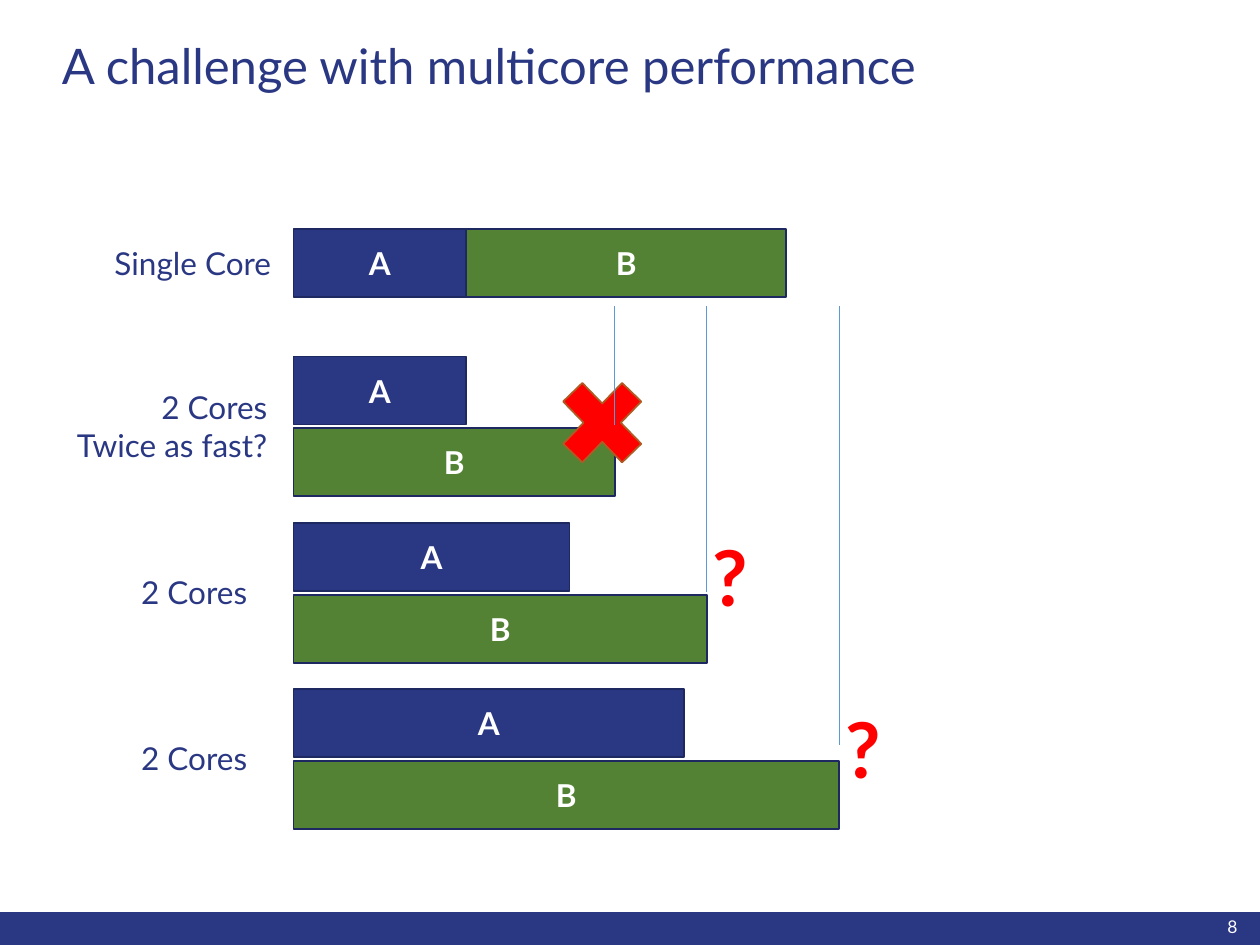
from lxml import etree
from pptx import Presentation
from pptx import util as u
from pptx.dml.color import RGBColor
from pptx.enum import shapes, text
from pptx.oxml.ns import qn

NAVY = RGBColor(0x2A, 0x37, 0x83)
OUTLINE = RGBColor(0x1F, 0x29, 0x61)
GREEN = RGBColor(0x54, 0x82, 0x35)
RED = RGBColor(0xFF, 0x00, 0x00)
BROWN = RGBColor(0xAF, 0x5C, 0x24)
BLUE = RGBColor(0x5B, 0x9B, 0xD5)
WHITE = RGBColor(0xFF, 0xFF, 0xFF)

FONT = "Lato"
PX = 9144  # 100 px to the inch
BAR_LEFT, BAR_HEIGHT, BAR_STEP = 233, 54, 57
GUIDE_TOP = 243
LEFT, CENTER, RIGHT = (text.PP_ALIGN.LEFT, text.PP_ALIGN.CENTER,
                       text.PP_ALIGN.RIGHT)


def emu(*lengths):
    return [u.Emu(length * PX) for length in lengths]


def write(frame, lines, size, color, align, bold=False,
          anchor=text.MSO_ANCHOR.TOP):
    frame.word_wrap = True
    frame.vertical_anchor = anchor
    for index, line in enumerate(lines):
        para = frame.add_paragraph() if index else frame.paragraphs[0]
        para.alignment = align
        span = para.add_run()
        span.text = line
        span.font.name = FONT
        span.font.size = u.Pt(size)
        span.font.bold = bold
        span.font.color.rgb = color


def add_label(page, box, lines, size=18, color=NAVY, align=RIGHT, **style):
    label = page.shapes.add_textbox(*emu(*box))
    write(label.text_frame, lines, size, color, align, **style)


def add_block(page, kind, box, fill, line=None):
    block = page.shapes.add_shape(kind, *emu(*box))
    block.shadow.inherit = False
    block.fill.solid()
    block.fill.fore_color.rgb = fill
    if line is None:
        block.line.fill.background()
    else:
        block.line.color.rgb = line
        block.line.width = u.Pt(1)
    return block


def add_bar(page, left, top, width, name, fill):
    bar = add_block(page, shapes.MSO_SHAPE.RECTANGLE,
                    (left, top, width, BAR_HEIGHT), fill, OUTLINE)
    write(bar.text_frame, [name], 18, WHITE, CENTER, bold=True,
          anchor=text.MSO_ANCHOR.MIDDLE)


def add_guide(page, x, bottom):
    guide = page.shapes.add_connector(shapes.MSO_CONNECTOR.STRAIGHT,
                                      *emu(x, bottom, x, GUIDE_TOP))
    guide.line.color.rgb = BLUE
    guide.line.width = u.Pt(0.5)
    etree.SubElement(guide.element.spPr, qn("a:effectLst"))


def add_title(page, box):
    title = page.shapes.title
    title.left, title.top, title.width, title.height = emu(*box)
    title.text_frame.auto_size = text.MSO_AUTO_SIZE.NONE
    write(title.text_frame, ["A challenge with multicore performance"],
          28, NAVY, LEFT)


def add_footer(page, left, top, width, height):
    add_block(page, shapes.MSO_SHAPE.RECTANGLE, (left, top, width, height), NAVY)
    add_label(page, (left + width - 355, top - 2, 347, 27), ["8"], 10, WHITE,
              anchor=text.MSO_ANCHOR.MIDDLE)


def add_single_core(page, left, top, a_width, b_width):
    add_bar(page, left, top, a_width, "A", NAVY)
    add_bar(page, left + a_width, top, b_width, "B", GREEN)
    add_label(page, (left - 156, top + 7, 148, 40), ["Single Core"])


def add_two_cores(page, left, top, a_width, b_width, label_right, lines):
    """Stack bar A over bar B, with the label centred beside them."""
    add_bar(page, left, top, a_width, "A", NAVY)
    add_bar(page, left, top + BAR_STEP, b_width, "B", GREEN)
    height = 9 + 31 * len(lines)
    label_top = top + (BAR_STEP + BAR_HEIGHT - height) // 2
    add_label(page, (label_right - 208, label_top, 208, height), lines)


def add_question(page, left, top):
    add_label(page, (left, top, 63, 84), ["?"], 44, RED, LEFT, bold=True)


def main():
    deck = Presentation()
    deck.slide_width, deck.slide_height = emu(1000, 750)
    page = deck.slides.add_slide(deck.slide_layouts[5])

    add_footer(page, 0, 724, 1000, 26)
    add_title(page, (39, 23, 911, 79))

    # One core runs A and then B
    add_single_core(page, BAR_LEFT, 182, 137, 254)

    # Ideal speed-up, ruled out
    add_two_cores(page, BAR_LEFT, 283, 137, 255, 222,
                  ["2 Cores", "Twice as fast?"])
    add_block(page, shapes.MSO_SHAPE.MATH_MULTIPLY, (433, 289, 90, 93),
              RED, BROWN)
    add_guide(page, BAR_LEFT + 255, 337)

    # Slower outcomes, each with its finishing time in question
    for top, a_width, b_width, guide_bottom, question_top in (
            (415, 219, 328, 470, 415), (547, 310, 433, 591, 552)):
        add_two_cores(page, BAR_LEFT, top, a_width, b_width, 206, ["2 Cores"])
        finish = BAR_LEFT + b_width
        add_guide(page, finish, guide_bottom)
        add_question(page, finish - 5, question_top)

    deck.save("out.pptx")


if __name__ == "__main__":
    main()
